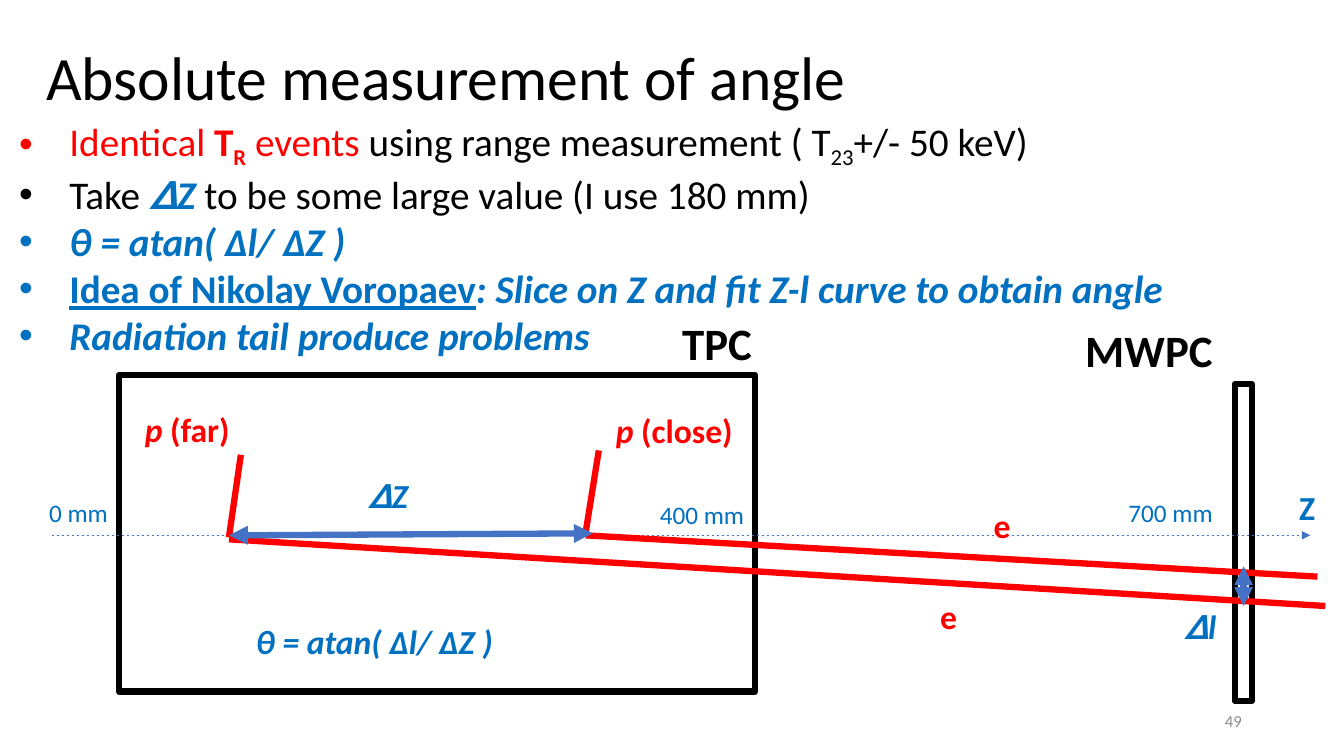
from lxml import etree
from pptx import Presentation
from pptx.dml.color import RGBColor
from pptx.enum.dml import MSO_LINE
from pptx.enum.shapes import MSO_CONNECTOR, MSO_SHAPE
from pptx.enum.text import MSO_ANCHOR, MSO_AUTO_SIZE, PP_ALIGN
from pptx.oxml.ns import qn
from pptx.util import Cm, Pt

STRAIGHT = MSO_CONNECTOR.STRAIGHT
RECTANGLE = MSO_SHAPE.RECTANGLE
DASH = MSO_LINE.DASH
MIDDLE = MSO_ANCHOR.MIDDLE
NO_FIT = MSO_AUTO_SIZE.NONE
LEFT, RIGHT = PP_ALIGN.LEFT, PP_ALIGN.RIGHT

BLACK = RGBColor(0x00, 0x00, 0x00)
RED = RGBColor(0xFF, 0x00, 0x00)
BLUE = RGBColor(0x00, 0x70, 0xC0)
ARROW_BLUE = RGBColor(0x44, 0x72, 0xC4)
GRAY = RGBColor(0x8C, 0x8C, 0x8C)

TITLE = "Absolute measurement of angle"
FORMULA = "θ = atan( Δl/ ΔZ )"
ITALIC = {"italic": True}
DELTA = {"name": "Roboto Slab"}
BLUE_EMPHASIS = {"color": BLUE, "bold": True, "italic": True}
DELTA_EMPHASIS = {**BLUE_EMPHASIS, **DELTA}

BULLETS = [
    ({}, [("Identical ", {"color": RED}),
          ("T", {"color": RED, "bold": True}),
          ("R", {"color": RED, "bold": True, "baseline": -25000}),
          (" events ", {"color": RED}),
          ("using range measurement ( T", {}),
          ("23", {"baseline": -25000}),
          ("+/- 50 keV)", {})]),
    ({}, [("Take ", {}), ("Δ", DELTA_EMPHASIS), ("Z", BLUE_EMPHASIS),
          (" to be some large value (I use 180 mm)", {})]),
    (BLUE_EMPHASIS, [(FORMULA, {})]),
    ({"color": BLUE, "bold": True},
     [("Idea of Nikolay Voropaev", {"underline": True}),
      (": Slice on Z and fit Z-l curve to obtain angle", ITALIC)]),
    (BLUE_EMPHASIS, [("Radiation tail produce problems", {})]),
]

DETECTORS = [(3, 9.45, 16.03), (31.12, 9.68, 0.43)]
DETECTOR_HEIGHT = 7.98

AXIS = ((1.3, 13.49), (33.02, 13.49))
TRACKS = [
    ((5.77, 13.54), (6.07, 11.46)),
    ((5.77, 13.59), (33.4, 15.27)),
    ((14.76, 13.41), (15.09, 11.35)),
    ((14.76, 13.49), (33.2, 14.53)),
]
SPANS = [((31.34, 14.27), (31.34, 15.27)), ((14.94, 13.44), (5.77, 13.49))]

SCALE = {"size": 18, "color": BLUE}
PARTICLE = {"size": 24, "color": RED, "bold": True}
DISTANCE = {"size": 24, **BLUE_EMPHASIS}
DETECTOR_NAME = {"size": 32, "bold": True}
LABELS = [
    (32.49, 12.14, 0.91, {"size": 24, "color": BLUE, "bold": True}, [("Z", {})]),
    (0.99, 12.4, 2.01, SCALE, [("0 mm", {})]),
    (16.38, 12.47, 2.67, SCALE, [("400 mm", {})]),
    (28.19, 12.4, 2.67, SCALE, [("700 mm", {})]),
    (16.94, 7.82, 2.29, DETECTOR_NAME, [("TPC", {})]),
    (27.1, 8, 4.93, DETECTOR_NAME, [("MWPC", {})]),
    (3.4, 10.19, 2.67, PARTICLE, [("p", ITALIC), (" (far)", {})]),
    (15.27, 10.21, 3.51, PARTICLE, [("p", ITALIC), (" (close)", {})]),
    (24.79, 12.6, 0.97, PARTICLE, [("e", {})]),
    (23.44, 14.88, 0.97, PARTICLE, [("e", {})]),
    (29.59, 15.14, 1.91, DISTANCE, [("Δ", DELTA), ("l", {})]),
    (9.02, 11.84, 1.91, DISTANCE, [("Δ", DELTA), ("Z", {})]),
    (6.2, 15.52, 8.86, DISTANCE, [(FORMULA, {})]),
]
LABEL_HEIGHTS = {18: 1.02, 24: 1.27, 32: 1.63}


def style_font(font, style):
    for key, value in style.items():
        if key == "size":
            font.size = Pt(value)
        elif key == "color":
            font.color.rgb = value
        elif key != "baseline":
            setattr(font, key, value)


def write_paragraph(para, style, spans):
    style_font(para.font, {"name": "Calibri", "color": BLACK, **style})
    for text, changes in spans:
        span = para.add_run()
        span.text = text
        style_font(span.font, changes)
        if "baseline" in changes:
            span.font._element.set("baseline", str(changes["baseline"]))


def add_text(page, left, top, width, height, wrap=True):
    box = page.shapes.add_textbox(Cm(left), Cm(top), Cm(width), Cm(height))
    box.text_frame.word_wrap = wrap
    return box.text_frame


def add_line(page, points, color, weight, heads=()):
    (x1, y1), (x2, y2) = points
    line = page.shapes.add_connector(STRAIGHT, Cm(x1), Cm(y1), Cm(x2), Cm(y2))
    line.line.color.rgb = color
    line.line.width = Pt(weight)
    for head in heads:
        etree.SubElement(line.line._get_or_add_ln(), qn(head), type="triangle")
    etree.SubElement(line._element.spPr, qn("a:effectLst"))
    return line


def add_bullets(page):
    frame = add_text(page, 0.23, 2.82, 31.8, 7.44)
    for index, (style, spans) in enumerate(BULLETS):
        para = frame.add_paragraph() if index else frame.paragraphs[0]
        properties = para._p.get_or_add_pPr()
        properties.set("marL", str(Cm(1.27)))
        properties.set("indent", str(-Cm(1.27)))
        etree.SubElement(properties, qn("a:buFont"), typeface="Arial")
        etree.SubElement(properties, qn("a:buChar"), char="•")
        write_paragraph(para, {"size": 28, **style}, spans)


def main():
    deck = Presentation()
    deck.slide_width, deck.slide_height = Cm(33.87), Cm(19.05)
    page = deck.slides.add_slide(deck.slide_layouts[5])

    title = page.shapes.title
    title.left, title.top, title.width, title.height = Cm(0.91), Cm(0.66), Cm(32.05), Cm(2.74)
    title.text_frame.auto_size = NO_FIT
    title.text_frame.vertical_anchor = MIDDLE
    heading = title.text_frame.paragraphs[0]
    heading.alignment = LEFT
    heading.line_spacing = 0.9
    write_paragraph(heading, {"size": 44}, [(TITLE, {})])

    for left, top, width in DETECTORS:
        detector = page.shapes.add_shape(RECTANGLE, Cm(left), Cm(top), Cm(width), Cm(DETECTOR_HEIGHT))
        detector.shadow.inherit = False
        detector.fill.background()
        detector.line.color.rgb = BLACK
        detector.line.width = Pt(4.5)

    axis = add_line(page, AXIS, ARROW_BLUE, 0.5, ["a:tailEnd"])
    axis.line.dash_style = DASH
    for track in TRACKS:
        add_line(page, track, RED, 4.5)
    for points in SPANS:
        add_line(page, points, ARROW_BLUE, 4.5, ["a:headEnd", "a:tailEnd"])

    for left, top, width, style, spans in LABELS:
        frame = add_text(page, left, top, width, LABEL_HEIGHTS[style["size"]], wrap=False)
        write_paragraph(frame.paragraphs[0], style, spans)
    add_bullets(page)

    number = add_text(page, 23.93, 17.65, 7.62, 1.02)
    number.vertical_anchor = MIDDLE
    number.paragraphs[0].alignment = RIGHT
    write_paragraph(number.paragraphs[0], {"size": 12, "color": GRAY}, [("49", {})])

    deck.save("out.pptx")


if __name__ == "__main__":
    main()
